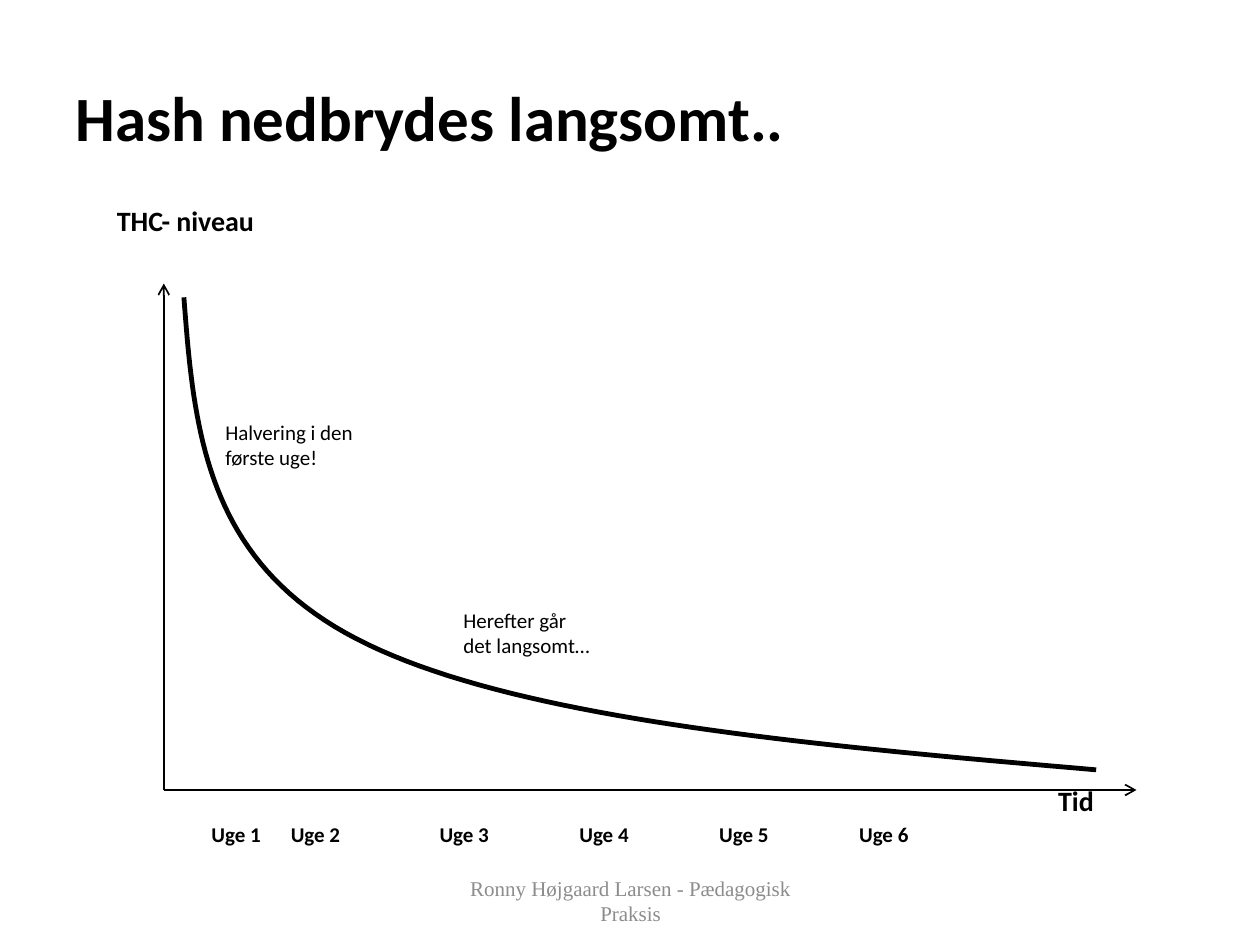
from lxml.etree import SubElement
from pptx import Presentation
from pptx.dml.color import RGBColor
from pptx.enum.shapes import MSO_CONNECTOR
from pptx.enum.text import MSO_ANCHOR, PP_ALIGN
from pptx.oxml.ns import qn
from pptx.util import Inches, Pt

COLORS = {"ink": "000000", "footer": "8C8C8C", "background": "FFFFFF"}


def color(name):
    return RGBColor.from_string(COLORS[name])


def write_text(shape, text, size=12, bold=False, font="Calibri", ink="ink",
               align=PP_ALIGN.LEFT, anchor=MSO_ANCHOR.TOP):
    frame = shape.text_frame
    frame.word_wrap = True
    frame.vertical_anchor = anchor
    paragraph = frame.paragraphs[0]
    paragraph.alignment = align
    run = paragraph.add_run()
    run.text = text
    run.font.size = Pt(size)
    run.font.bold = bold
    run.font.name = font
    run.font.color.rgb = color(ink)


def bezier_points(start, control_1, control_2, end, steps=40):
    for step in range(1, steps + 1):
        t = step / steps
        weights = ((1 - t) ** 3, 3 * t * (1 - t) ** 2, 3 * t * t * (1 - t), t ** 3)
        corners = (start, control_1, control_2, end)
        yield tuple(Inches(sum(weight * corner[axis] for weight, corner in zip(weights, corners)))
                    for axis in (0, 1))


class SlideBuilder:
    def __init__(self, slide):
        self.slide = slide
        slide.background.fill.solid()
        slide.background.fill.fore_color.rgb = color("background")

    def text(self, text, left, top, width, height, **style):
        shape = self.slide.shapes.add_textbox(
            Inches(left), Inches(top), Inches(width), Inches(height))
        write_text(shape, text, **style)

    def arrow(self, start, end):
        connector = self.slide.shapes.add_connector(
            MSO_CONNECTOR.STRAIGHT, *(Inches(value) for value in start + end))
        connector.line.color.rgb = color("ink")
        connector.line.width = Pt(1)
        SubElement(connector.line._get_or_add_ln(), qn("a:tailEnd"), type="arrow")
        SubElement(connector._element.spPr, qn("a:effectLst"))

    def curve(self, start, segments):
        builder = self.slide.shapes.build_freeform(Inches(start[0]), Inches(start[1]))
        for control_1, control_2, end in segments:
            builder.add_line_segments(
                list(bezier_points(start, control_1, control_2, end)), close=False)
            start = end
        shape = builder.convert_to_shape()
        shape.shadow.inherit = False
        shape.fill.background()
        shape.line.color.rgb = color("ink")
        shape.line.width = Pt(2.75)


def main():
    presentation = Presentation()
    presentation.slide_width = Inches(10)
    presentation.slide_height = Inches(7.5)
    builder = SlideBuilder(presentation.slides.add_slide(presentation.slide_layouts[6]))

    builder.text("Hash nedbrydes langsomt..", 0.5, 0.3, 9, 1.25,
                 size=36, bold=True, anchor=MSO_ANCHOR.MIDDLE)

    origin = (1.3, 6.27)
    builder.arrow(origin, (9.02, 6.27))
    builder.arrow(origin, (1.3, 2.25))
    builder.text("THC- niveau", 0.83, 1.57, 2, 0.37, size=16, bold=True)
    builder.text("Tid", 8.3, 6.17, 0.8, 0.37, size=16, bold=True)

    week_lefts = [1.58, 2.21] + [3.39 + 1.11 * step for step in range(4)]
    for week, left in enumerate(week_lefts, 1):
        builder.text(f"Uge {week}", left, 6.47, 0.7, 0.3, bold=True)

    builder.curve((1.46, 2.36), [
        ((1.54, 3.41), (1.63, 4.45), (2.83, 5.07)),
        ((4.04, 5.7), (6.37, 5.91), (8.7, 6.11)),
    ])

    builder.text("Ronny Højgaard Larsen - Pædagogisk Praksis", 3.42, 6.95, 3.17, 0.4,
                 font="Times New Roman", ink="footer",
                 align=PP_ALIGN.CENTER, anchor=MSO_ANCHOR.MIDDLE)
    builder.text("Halvering i den første uge!", 1.69, 3.28, 1.34, 0.5)
    builder.text("Herefter går det langsomt…", 3.58, 4.77, 1.26, 0.5)

    presentation.save("out.pptx")


if __name__ == "__main__":
    main()
